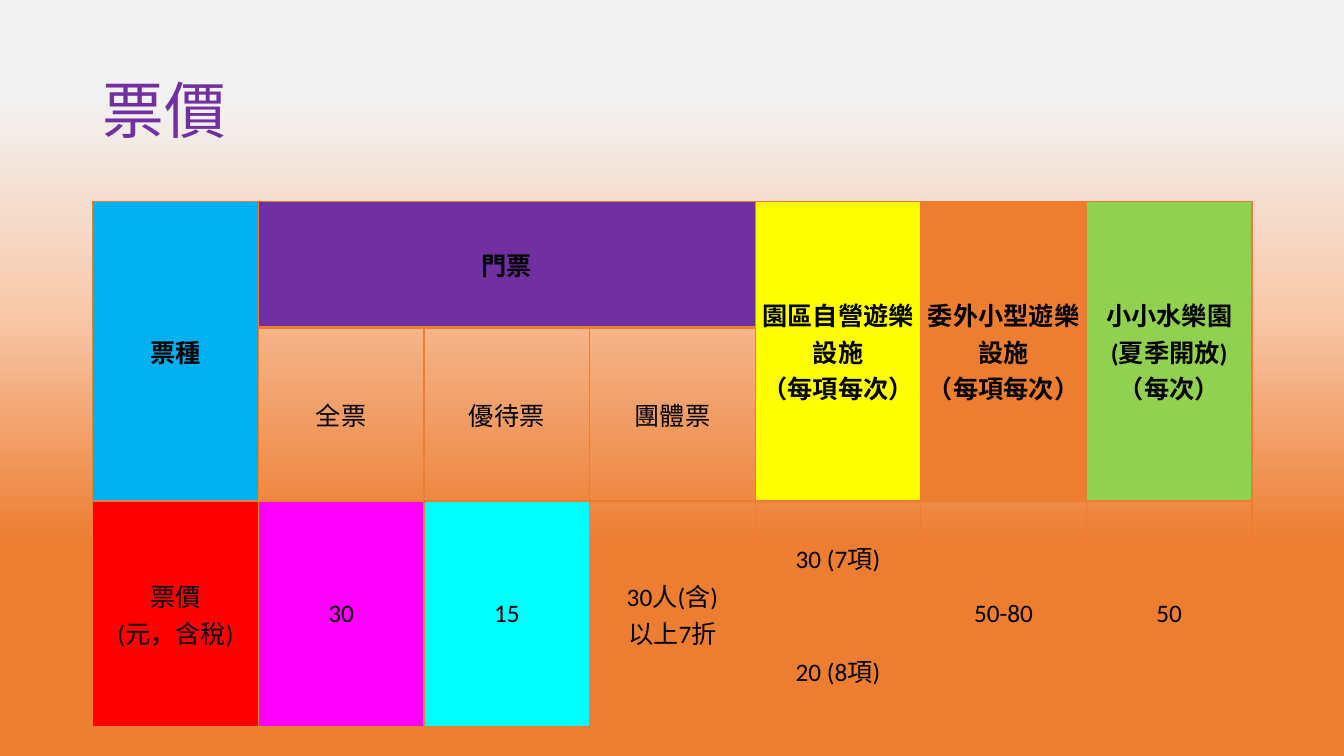
from dataclasses import dataclass

from lxml.etree import SubElement
from pptx import Presentation
from pptx.dml.color import RGBColor
from pptx.enum.text import MSO_ANCHOR as ANCHOR, PP_ALIGN as ALIGN
from pptx.oxml.ns import qn
from pptx.util import Inches, Pt

FONT = "Calibri"
ORANGE = "ED7D31"
BACKGROUND = [(13, "F2F2F2"), (40, "F8CBAD"), (72, ORANGE)]
TABLE_WIDTH = 11.5
COLUMNS = 7
ROW_HEIGHTS = [1.25, 1.72, 1.12, 1.12]


@dataclass
class Cell:
    row: int
    col: int
    text: str
    fill: str | None = None
    rows: int = 1
    cols: int = 1
    header: bool = False
    alpha: int = 100


CELLS = [
    # Header
    Cell(0, 0, "票種", "00B0F0", rows=2, header=True),
    Cell(0, 1, "門票", "7030A0", cols=3, header=True),
    Cell(0, 4, "園區自營遊樂設施\n（每項每次）", "FFFF00", rows=2, header=True),
    Cell(0, 5, "委外小型遊樂設施\n（每項每次）", ORANGE, rows=2, header=True),
    Cell(0, 6, "小小水樂園\n(夏季開放)\n（每次）", "92D050", rows=2, header=True),
    # Ticket types
    Cell(1, 1, "全票", ORANGE, alpha=20),
    Cell(1, 2, "優待票", ORANGE, alpha=20),
    Cell(1, 3, "團體票", ORANGE, alpha=20),
    # Prices
    Cell(2, 0, "票價\n(元，含稅)", "FF0000", rows=2),
    Cell(2, 1, "30", "FF00FF", rows=2),
    Cell(2, 2, "15", "00FFFF", rows=2),
    Cell(2, 3, "30人(含)\n以上7折", rows=2),
    Cell(2, 4, "30 (7項)"),
    Cell(2, 5, "50-80", rows=2),
    Cell(2, 6, "50", rows=2),
    Cell(3, 4, "20 (8項)", ORANGE, alpha=20),
]


def color(value: str) -> RGBColor:
    return RGBColor.from_string(value)


def write(tf, text: str, *, size: float, fill: str = "000000", bold: bool = False,
          align=ALIGN.LEFT, spacing: float = 1.0) -> None:
    p = tf.paragraphs[0]
    p.alignment = align
    p.line_spacing = spacing
    for i, line in enumerate(text.split("\n")):
        if i:
            p.add_line_break()
        r = p.add_run()
        r.text = line
        r.font.name = FONT
        r.font.size = Pt(size)
        r.font.bold = bold
        r.font.color.rgb = color(fill)


def paint_background(slide) -> None:
    fill = slide.background.fill
    fill.gradient()
    fill.gradient_angle = 270
    stops = next(slide.element.iter(qn("a:gsLst")))
    for stop in list(stops):
        stops.remove(stop)
    for position, value in BACKGROUND:
        stop = SubElement(stops, qn("a:gs"), pos=str(position * 1000))
        SubElement(stop, qn("a:srgbClr"), val=value)


def set_borders(cell, bottom: float) -> None:
    tc_pr = cell._tc.get_or_add_tcPr()
    for i, (side, width) in enumerate([("L", 1), ("R", 1), ("T", 1), ("B", bottom)]):
        ln = SubElement(tc_pr, qn(f"a:ln{side}"), w=str(Pt(width)))
        solid = SubElement(ln, qn("a:solidFill"))
        SubElement(solid, qn("a:srgbClr"), val=ORANGE)
        tc_pr.insert(i, ln)


def draw_cell(table, item: Cell) -> None:
    cell = table.cell(item.row, item.col)
    if item.rows * item.cols > 1:
        cell.merge(table.cell(item.row + item.rows - 1, item.col + item.cols - 1))
    cell.vertical_anchor = ANCHOR.MIDDLE
    cell.margin_left = cell.margin_right = Inches(0.03)
    cell.margin_top = cell.margin_bottom = Inches(0.03)
    write(cell.text_frame, item.text, size=18, bold=item.header, align=ALIGN.CENTER)

    for row in range(item.row, item.row + item.rows):
        for col in range(item.col, item.col + item.cols):
            part = table.cell(row, col)
            if item.fill:
                part.fill.solid()
                part.fill.fore_color.rgb = color(item.fill)
            else:
                part.fill.background()
            if item.alpha < 100:
                srgb = next(part._tc.tcPr.iter(qn("a:srgbClr")))
                SubElement(srgb, qn("a:alpha"), val=str(item.alpha * 1000))
            set_borders(part, 2 if item.header else 1)


def main() -> None:
    prs = Presentation()
    prs.slide_width, prs.slide_height = Inches(13.33), Inches(7.5)
    slide = prs.slides.add_slide(prs.slide_layouts[6])
    paint_background(slide)

    # Title
    title = slide.shapes.add_textbox(Inches(0.92), Inches(0.4), Inches(11.5), Inches(1.45))
    tf = title.text_frame
    tf.word_wrap = True
    tf.vertical_anchor = ANCHOR.MIDDLE
    write(tf, "票價", size=44, fill="7030A0", spacing=0.9)

    # Price table
    table = slide.shapes.add_table(
        len(ROW_HEIGHTS), COLUMNS, Inches(0.92), Inches(2),
        Inches(TABLE_WIDTH), Inches(sum(ROW_HEIGHTS))).table
    table.first_row = table.horz_banding = False
    for column in table.columns:
        column.width = Inches(TABLE_WIDTH / COLUMNS)
    for row, height in zip(table.rows, ROW_HEIGHTS):
        row.height = Inches(height)
    for item in CELLS:
        draw_cell(table, item)

    prs.save("out.pptx")


if __name__ == "__main__":
    main()
